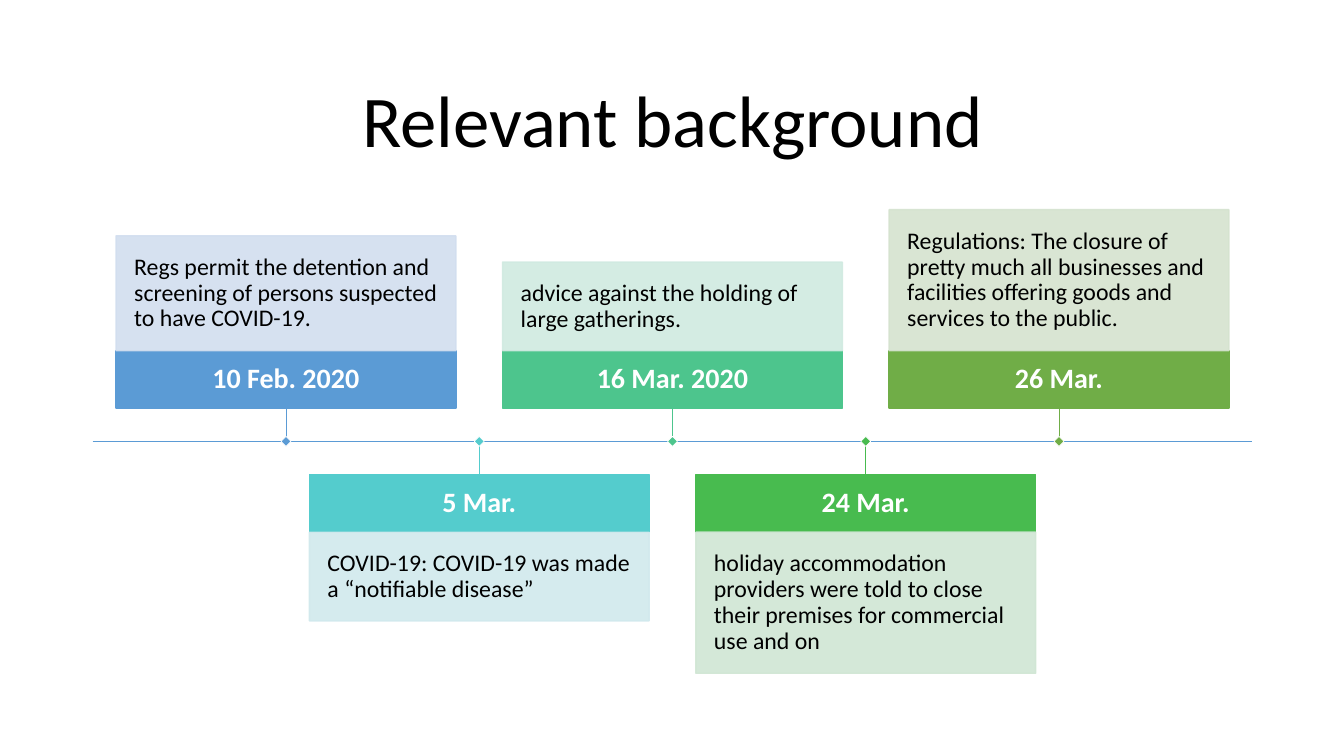
from lxml.etree import SubElement
from pptx import Presentation
from pptx.dml.color import RGBColor
from pptx.enum.shapes import MSO_CONNECTOR, MSO_SHAPE
from pptx.enum.text import MSO_ANCHOR, PP_ALIGN
from pptx.oxml.ns import qn
from pptx.util import Inches, Pt

THEME = {
    "font": "Calibri", "ink": "000000", "paper": "FFFFFF", "axis": "5B9BD5",
    "title": 52, "date": 20, "body": 17, "opacity": 90,
}

# Date, event, strong colour, pale colour, lines of event text
EVENTS = [
    ("10 Feb. 2020", "Regs permit the detention and screening of persons suspected to have COVID-19.",
     "5B9BD5", "D2DEEF", 3),
    ("5 Mar.", "COVID-19: COVID-19 was made a “notifiable disease”",
     "54CCCD", "D1E9ED", 2),
    ("16 Mar. 2020", "advice against the holding of large gatherings.",
     "4DC58D", "D0EAE1", 2),
    ("24 Mar.", "holiday accommodation providers were told to close their premises for commercial use and on",
     "48BB4F", "D0E6D4", 4),
    ("26 Mar.", "Regulations: The closure of pretty much all businesses and facilities offering goods and services to the public.",
     "70AD47", "D5E3CF", 4),
]

# Timeline grid, in inches
LEFT, WIDTH, AXIS = 0.92, 11.5, 4.38
COLUMN = WIDTH / (len(EVENTS) + 1)
CARD, DATE_HEIGHT, STEM = 3.37, 0.57, 0.33
LINE_HEIGHT, DATE_INSET, BODY_INSET = 0.26, 0.11, 0.18
MARKER = 0.07


def write(shape, text, size, color, align, inset=None, bold=False):
    frame = shape.text_frame
    frame.word_wrap = True
    frame.vertical_anchor = MSO_ANCHOR.MIDDLE
    if inset is not None:
        frame.margin_left = frame.margin_right = Inches(inset)
        frame.margin_top = frame.margin_bottom = Inches(inset)
    para = frame.paragraphs[0]
    para.alignment = align
    para.line_spacing = 0.9
    span = para.add_run()
    span.text = text
    span.font.name = THEME["font"]
    span.font.size = Pt(size)
    span.font.bold = bold
    span.font.color.rgb = RGBColor.from_string(color)


def draw(kind, left, top, right, bottom, color, weight, fill=None):
    """Add a rectangle when a fill is given, otherwise a straight line."""
    if fill:
        shape = page.shapes.add_shape(kind, Inches(left), Inches(top),
                                      Inches(right - left), Inches(bottom - top))
        shape.shadow.inherit = False
        shape.fill.solid()
        shape.fill.fore_color.rgb = RGBColor.from_string(fill)
    else:
        shape = page.shapes.add_connector(kind, Inches(left), Inches(top),
                                          Inches(right), Inches(bottom))
    shape.line.color.rgb = RGBColor.from_string(color)
    shape.line.width = Pt(weight)
    if not fill:
        SubElement(shape._element.spPr, qn("a:effectLst"))
    return shape


deck = Presentation()
deck.slide_width, deck.slide_height = Inches(13.33), Inches(7.5)
page = deck.slides.add_slide(deck.slide_layouts[5])

# Title
title = page.shapes.title
title.left, title.top = Inches(LEFT), Inches(0.61)
title.width, title.height = Inches(WIDTH), Inches(1.24)
write(title, "Relevant background", THEME["title"], THEME["ink"], PP_ALIGN.CENTER)

# Time axis
draw(MSO_CONNECTOR.STRAIGHT, LEFT, AXIS, LEFT + WIDTH, AXIS, THEME["axis"], 1)

# Events, alternately above and below the axis
for index, (date, event, strong, pale, lines) in enumerate(EVENTS):
    center = LEFT + COLUMN * (index + 1)
    left, right = center - CARD / 2, center + CARD / 2
    body_height = 2 * BODY_INSET + lines * LINE_HEIGHT
    above = index % 2 == 0
    if above:
        stem_top, stem_bottom = AXIS - STEM, AXIS
        date_top = stem_top - DATE_HEIGHT
        body_top = date_top - body_height
    else:
        stem_top, stem_bottom = AXIS, AXIS + STEM
        date_top = stem_bottom
        body_top = date_top + DATE_HEIGHT

    # Date bar
    bar = draw(MSO_SHAPE.RECTANGLE, left, date_top, right, date_top + DATE_HEIGHT,
               strong, 1, strong)
    write(bar, date, THEME["date"], THEME["paper"], PP_ALIGN.CENTER, DATE_INSET, True)

    # Event text on a slightly transparent panel
    panel = draw(MSO_SHAPE.RECTANGLE, left, body_top, right, body_top + body_height,
                 pale, 1, pale)
    for color in panel._element.spPr.iter(qn("a:srgbClr")):
        SubElement(color, qn("a:alpha"), val=str(THEME["opacity"] * 1000))
    write(panel, event, THEME["body"], THEME["ink"], PP_ALIGN.LEFT, BODY_INSET)

    # Stem and marker
    draw(MSO_CONNECTOR.STRAIGHT, center, stem_top, center, stem_bottom, strong, 0.5)
    marker = draw(MSO_SHAPE.RECTANGLE, center - MARKER / 2, AXIS - MARKER / 2,
                  center + MARKER / 2, AXIS + MARKER / 2, THEME["paper"], 0.5, strong)
    marker.rotation = 45

deck.save("out.pptx")
